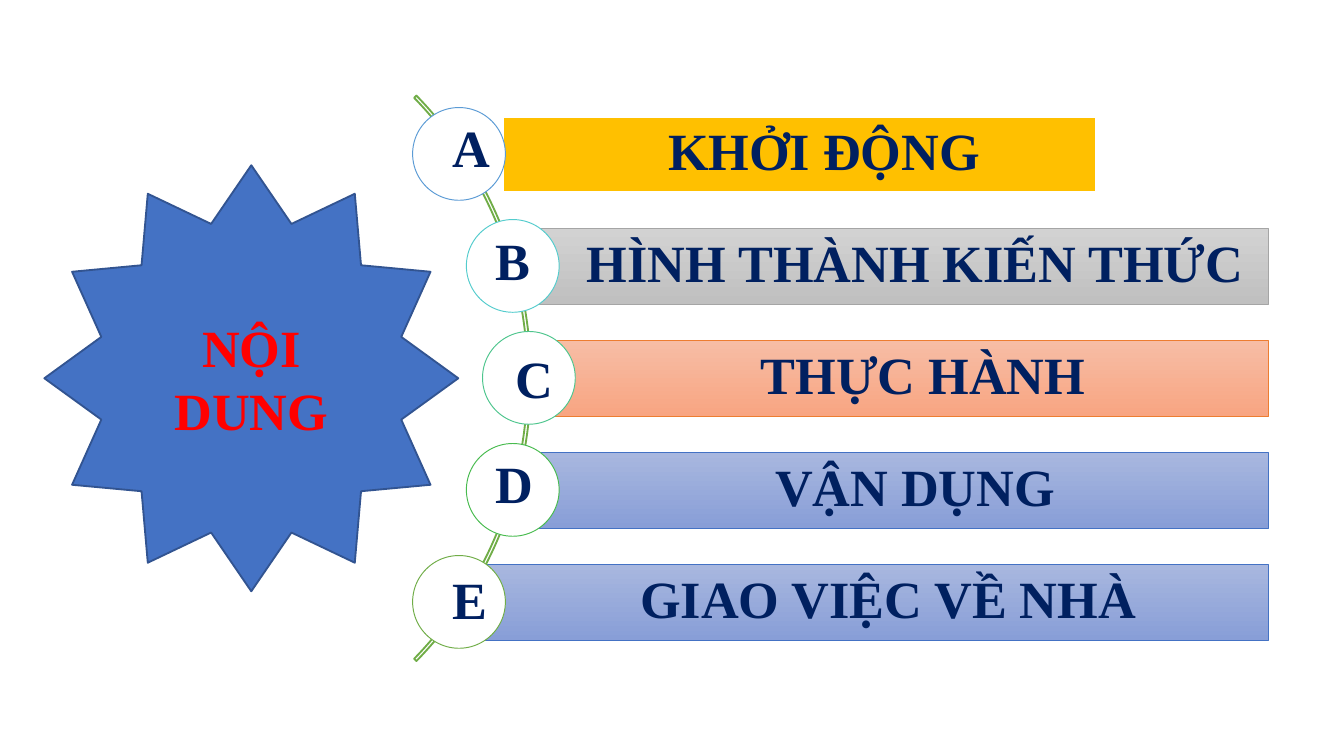
from dataclasses import dataclass

from pptx import Presentation
from pptx.dml.color import RGBColor
from pptx.enum.shapes import MSO_SHAPE
from pptx.enum.text import MSO_ANCHOR, MSO_AUTO_SIZE, PP_ALIGN
from pptx.shapes.autoshape import Shape
from pptx.slide import Slide
from pptx.text.text import TextFrame
from pptx.util import Inches, Pt

RECT, OVAL = MSO_SHAPE.RECTANGLE, MSO_SHAPE.OVAL
STAR, ARC = MSO_SHAPE.STAR_12_POINT, MSO_SHAPE.BLOCK_ARC
MIDDLE, CENTER, LEFT = MSO_ANCHOR.MIDDLE, PP_ALIGN.CENTER, PP_ALIGN.LEFT
GROW = MSO_AUTO_SIZE.SHAPE_TO_FIT_TEXT

FONT = "Times New Roman"
WHITE = RGBColor(0xFF, 0xFF, 0xFF)
RED = RGBColor(0xFF, 0x00, 0x00)
NAVY = RGBColor(0x00, 0x20, 0x60)
BLUE = RGBColor(0x44, 0x72, 0xC4)
DARK_BLUE = RGBColor(0x32, 0x54, 0x91)
GREEN = RGBColor(0x70, 0xAD, 0x47)
AMBER = RGBColor(0xFF, 0xC0, 0x00)
GRAY = RGBColor(0xA5, 0xA5, 0xA5)
ORANGE = RGBColor(0xED, 0x7D, 0x31)
SKY = RGBColor(0x5B, 0x9B, 0xD5)
TURQUOISE = RGBColor(0x54, 0xCC, 0xCD)
MINT = RGBColor(0x4D, 0xC5, 0x8D)
LEAF = RGBColor(0x48, 0xBB, 0x4F)
GRAY_FADE = (RGBColor(0xD2, 0xD2, 0xD2), RGBColor(0xC0, 0xC0, 0xC0))
ORANGE_FADE = (RGBColor(0xF7, 0xBD, 0xA5), RGBColor(0xF8, 0xA5, 0x82))
BLUE_FADE = (RGBColor(0xA8, 0xB7, 0xDF), RGBColor(0x88, 0x9E, 0xD7))

# Rows share one pitch; bars start at the middle of their circle
ROW_PITCH = 2.5 / 3
CIRCLE_TOP, CIRCLE_SIZE = 0.8, 0.69
BAR_TOP, BAR_HEIGHT, BAR_RIGHT = 0.87, 0.56, 9.44


@dataclass
class Row:
    letter: str
    title: str
    circle_left: float
    ring: RGBColor
    fade: tuple[RGBColor, ...]
    border: RGBColor
    letter_at: tuple[float, float]
    letter_width: float = 0.48
    bar_left: float | None = None
    bar_right: float = BAR_RIGHT
    border_width: float = 0.5


ROWS = [
    Row("A", "KHỞI ĐỘNG", 3.07, SKY, (AMBER,), WHITE, (3.27, 0.81),
        bar_left=3.74, bar_right=8.16, border_width=1.5),
    Row("B", "HÌNH THÀNH KIẾN THỨC", 3.47, TURQUOISE, GRAY_FADE, GRAY,
        (3.59, 1.65), letter_width=0.39),
    Row("C", "THỰC HÀNH", 3.59, MINT, ORANGE_FADE, ORANGE, (3.74, 2.53)),
    Row("D", "VẬN DỤNG", 3.47, LEAF, BLUE_FADE, BLUE, (3.59, 3.31)),
    Row("E", "GIAO VIỆC VỀ NHÀ", 3.07, GREEN, BLUE_FADE, BLUE, (3.27, 4.17),
        letter_width=0.46),
]


def add_box(s: Slide, kind: MSO_SHAPE, x: float, y: float, w: float, h: float,
            fade: tuple[RGBColor, ...], line: RGBColor, width: float) -> Shape:
    """Draw a shape with no fill, one colour or a downward gradient."""
    sp = s.shapes.add_shape(kind, Inches(x), Inches(y), Inches(w), Inches(h))
    sp.shadow.inherit = False
    if not fade:
        sp.fill.background()
    elif len(fade) == 1:
        sp.fill.solid()
        sp.fill.fore_color.rgb = fade[0]
    else:
        sp.fill.gradient()
        sp.fill.gradient_angle = 270
        for stop, color in zip(sp.fill.gradient_stops, fade):
            stop.color.rgb = color
    sp.line.color.rgb = line
    sp.line.width = Pt(width)
    return sp


def write(tf: TextFrame, text: str, color: RGBColor, align: PP_ALIGN) -> None:
    p = tf.paragraphs[0]
    p.alignment = align
    r = p.add_run()
    r.text = text
    r.font.name = FONT
    r.font.size = Pt(28)
    r.font.bold = True
    r.font.color.rgb = color


def add_row(s: Slide, i: int, row: Row) -> None:
    offset = i * ROW_PITCH
    left = row.bar_left or row.circle_left + CIRCLE_SIZE / 2
    bar = add_box(s, RECT, left, BAR_TOP + offset, row.bar_right - left,
                  BAR_HEIGHT, row.fade, row.border, row.border_width)
    tf = bar.text_frame
    tf.word_wrap = True
    tf.vertical_anchor = MIDDLE
    tf.margin_left = Inches(0.44)
    tf.margin_top = tf.margin_right = Inches(0.08)
    tf.margin_bottom = Inches(0.09)
    write(tf, row.title, NAVY, CENTER)
    tf.paragraphs[0].line_spacing = 0.9
    add_box(s, OVAL, row.circle_left, CIRCLE_TOP + offset, CIRCLE_SIZE,
            CIRCLE_SIZE, (WHITE,), row.ring, 0.5)


def add_letter(s: Slide, row: Row) -> None:
    x, y = row.letter_at
    tb = s.shapes.add_textbox(Inches(x), Inches(y), Inches(row.letter_width),
                              Inches(0.57))
    tb.text_frame.word_wrap = False
    tb.text_frame.auto_size = GROW
    write(tb.text_frame, row.letter, NAVY, LEFT)


def main() -> None:
    # Widescreen, 16:9
    prs = Presentation()
    prs.slide_width = Inches(10)
    prs.slide_height = Inches(10) * 9 // 16
    s = prs.slides.add_slide(prs.slide_layouts[6])

    # Star with the heading
    star = add_box(s, STAR, 0.33, 1.23, 3.08, 3.17, (BLUE,), DARK_BLUE, 1)
    star.text_frame.word_wrap = True
    star.text_frame.vertical_anchor = MIDDLE
    write(star.text_frame, "NỘI DUNG", RED, CENTER)

    # Thin arc from 315 to 45 degrees, behind the rows
    arc = add_box(s, ARC, -1.96, -0.18, 5.91, 5.99, (), GREEN, 1)
    for i, value in enumerate((189, 27, 0.004)):
        arc.adjustments[i] = value

    # Bars and circles, then the letters on top
    for i, row in enumerate(ROWS):
        add_row(s, i, row)
    for row in ROWS:
        add_letter(s, row)

    prs.save("out.pptx")


if __name__ == "__main__":
    main()
